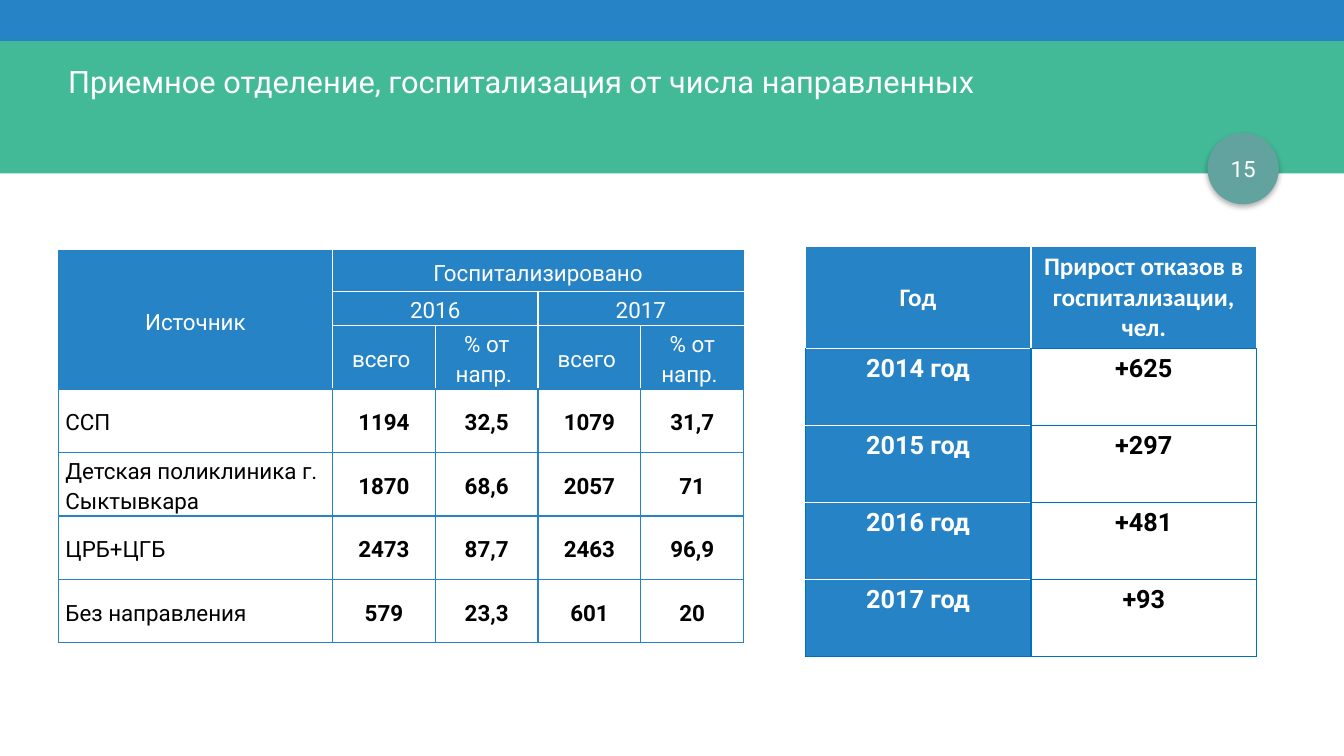
from lxml.etree import SubElement as Sub
from pptx import Presentation
from pptx.dml.color import RGBColor as Rgb
from pptx.enum.shapes import MSO_SHAPE as Kind
from pptx.enum.text import MSO_ANCHOR as Anchor, PP_ALIGN as Align
from pptx.oxml.ns import qn
from pptx.util import Cm, Pt

HUES = {"blue": "2683C6", "green": "42BA97", "sage": "62A39F",
        "line": "0070C0", "white": "FFFFFF", "black": "000000"}

TITLE = "Приемное отделение, госпитализация от числа направленных"
PAGE = "15"

# None marks a cell covered by a merged one
SOURCES = [
    ["Источник", "Госпитализировано", None, None, None],
    [None, "2016", None, "2017", None],
    [None, "всего ", "% от напр. ", "всего ", "% от напр. "],
    ["ССП", "1194", "32,5", "1079", "31,7"],
    ["Детская поликлиника г. Сыктывкара", "1870", "68,6", "2057", "71"],
    ["ЦРБ+ЦГБ", "2473", "87,7", "2463", "96,9"],
    ["Без направления", "579", "23,3", "601", "20"],
]
MERGES = [((0, 0), (2, 0)), ((0, 1), (0, 4)), ((1, 1), (1, 2)), ((1, 3), (1, 4))]
REFUSALS = [
    ["Год", "Прирост отказов в госпитализации, чел."],
    ["2014 год", "+625"],
    ["2015 год", "+297"],
    ["2016 год", "+481"],
    ["2017 год", "+93"],
]


def hue(name):
    return Rgb.from_string(HUES[name])


def write(frame, text, size, color, font="Roboto", bold=False, align=Align.CENTER, gap=1.0):
    para = frame.paragraphs[0]
    para.alignment, para.line_spacing = align, gap
    run = para.add_run()
    run.text = text
    run.font.name, run.font.size, run.font.bold = font, Pt(size), bold
    run.font.color.rgb = hue(color)


def shape(kind, box, color):
    item = slide.shapes.add_shape(kind, *map(Cm, box))
    item.shadow.inherit = False
    item.fill.solid()
    item.fill.fore_color.rgb = hue(color)
    item.line.fill.background()
    return item


def label(box, anchor, *args, **more):
    frame = slide.shapes.add_textbox(*map(Cm, box)).text_frame
    frame.word_wrap, frame.vertical_anchor = True, anchor
    write(frame, *args, **more)


def tint(parent, color, alpha=None):
    node = Sub(parent, qn("a:srgbClr"), val=HUES[color])
    if alpha:
        Sub(node, qn("a:alpha"), val=str(alpha * 1000))


def shade(item):
    """Drop a soft shadow straight down."""
    effect = item._element.spPr.find(qn("a:effectLst"))
    outer = Sub(effect, qn("a:outerShdw"), blurRad=str(Pt(4)), dist=str(Pt(2)),
                dir=str(90 * 60000), algn="t", rotWithShape="0")
    tint(outer, "black", 30)


def border(cell, side, color):
    line = Sub(cell._tc.get_or_add_tcPr(), qn("a:ln" + side), w=str(Pt(1)))
    tint(Sub(line, qn("a:solidFill")), color)


def grid(left, top, wides, highs, rows, merges, filled, line, rim, style):
    """Draw a table: white rules between filled cells, rim round the head, line elsewhere."""
    table = slide.shapes.add_table(len(rows), len(wides), Cm(left), Cm(top),
                                   Cm(sum(wides)), Cm(sum(highs))).table
    table.first_row = table.horz_banding = False
    for col, wide in zip(table.columns, wides):
        col.width = Cm(wide)
    for row, high in zip(table.rows, highs):
        row.height = Cm(high)
    for start, end in merges:
        table.cell(*start).merge(table.cell(*end))

    def edge(r, c, y, x):
        if not (0 <= y < len(rows) and 0 <= x < len(wides)):
            return rim if r == 0 else line
        return "white" if filled(r, c) and filled(y, x) else line

    for r, row in enumerate(rows):
        for c, text in enumerate(row):
            if text is None:
                continue
            cell = table.cell(r, c)
            down = cell.span_height if cell.is_merge_origin else 1
            over = cell.span_width if cell.is_merge_origin else 1
            near = {"L": (r, c - 1), "R": (r, c + over), "T": (r - 1, c), "B": (r + down, c)}
            for side, spot in near.items():
                border(cell, side, edge(r, c, *spot))
            cell.fill.solid()
            cell.fill.fore_color.rgb = hue("blue" if filled(r, c) else "white")
            style(cell, r, c, text, "white" if filled(r, c) else "black")


def source(cell, r, c, text, color):
    cell.margin_left = cell.margin_right = Cm(0.18)
    cell.margin_top, cell.margin_bottom = Cm(0.03), 0
    cell.vertical_anchor = Anchor.MIDDLE
    body = r > 2
    write(cell.text_frame, text, 16, color, bold=body and c > 0,
          align=Align.LEFT if body and c == 0 else Align.CENTER, gap=1.15)


def refusal(cell, r, c, text, color):
    cell.vertical_anchor = Anchor.TOP if r else Anchor.MIDDLE
    write(cell.text_frame, text, 18, color, "Roboto" if r else "Calibri", True)


deck = Presentation()
deck.slide_width, deck.slide_height = Cm(33.87), Cm(19.05)
slide = deck.slides.add_slide(deck.slide_layouts[6])

shape(Kind.RECTANGLE, (0, 0, 33.87, 1.04), "blue")
shape(Kind.RECTANGLE, (0, 1.04, 33.87, 3.33), "green")
shade(shape(Kind.OVAL, (30.43, 3.35, 1.8, 1.8), "sage"))
label((1.47, 1.55, 31.19, 1.19), Anchor.TOP, TITLE, 22, "white", align=Align.LEFT, gap=0.9)
label((30.33, 3.73, 2, 1.02), Anchor.MIDDLE, PAGE, 16, "white")

grid(1.47, 6.32, [6.91] + [2.59] * 4, [1.02, 0.86] + [1.6] * 5, SOURCES, MERGES,
     lambda r, c: r < 3, "blue", "blue", source)
grid(20.29, 6.2, [5.69] * 2, [2.59] + [1.94] * 4, REFUSALS, [],
     lambda r, c: r == 0 or c == 0, "line", "white", refusal)

deck.save("out.pptx")
